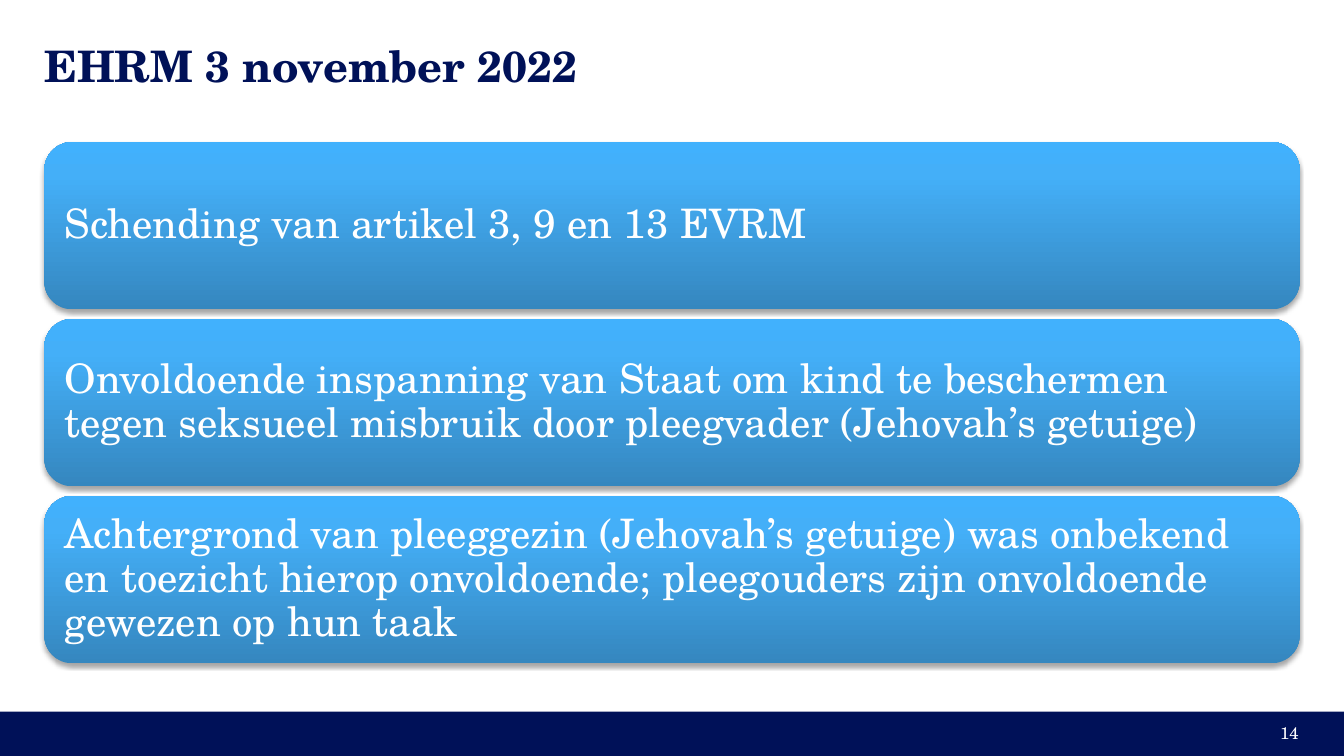
from copy import deepcopy
from dataclasses import dataclass

from lxml.etree import SubElement
from pptx import Presentation
from pptx.dml.color import RGBColor
from pptx.enum.shapes import MSO_SHAPE
from pptx.enum.text import MSO_ANCHOR, PP_ALIGN
from pptx.oxml.ns import qn
from pptx.util import Pt


@dataclass(frozen=True)
class Theme:
    font: str = "TeX Gyre Schola"
    navy: str = "001158"
    white: str = "FFFFFF"
    shade: str = "000000"
    blues: tuple = ((0, "3587BF"), (0.8, "44AFF8"), (1, "41B1FD"))
    title: int = 31
    body: float = 29
    small: int = 12


THEME = Theme()
WIDTH, HEIGHT = 960.48, 540
MARGIN = 31.7
POINTS = (
    "Schending van artikel 3, 9 en 13 EVRM",
    "Onvoldoende inspanning van Staat om kind te beschermen tegen seksueel "
    "misbruik door pleegvader (Jehovah’s getuige)",
    "Achtergrond van pleeggezin (Jehovah’s getuige) was onbekend en toezicht "
    "hierop onvoldoende; pleegouders zijn onvoldoende gewezen op hun taak",
)


def write(shape, text, size, color, inset=0, align=PP_ALIGN.LEFT, bold=False):
    """Fill a shape with one vertically centred paragraph."""
    frame = shape.text_frame
    frame.word_wrap = True
    frame.vertical_anchor = MSO_ANCHOR.MIDDLE
    frame.margin_left = frame.margin_right = Pt(inset)
    frame.margin_top = frame.margin_bottom = Pt(inset)
    para = frame.paragraphs[0]
    para.text = text
    para.alignment = align
    para.line_spacing = 0.9
    font = para.font
    font.name, font.size, font.bold = THEME.font, Pt(size), bold
    font.color.rgb = RGBColor.from_string(color)


def add_title(slide, left, top, width, height):
    box = slide.shapes.add_textbox(Pt(left), Pt(top), Pt(width), Pt(height))
    write(box, "EHRM 3 november 2022", THEME.title, THEME.navy, bold=True)


def add_footer(slide, left, top, width, height):
    bar = slide.shapes.add_shape(
        MSO_SHAPE.RECTANGLE, Pt(left), Pt(top), Pt(width), Pt(height))
    bar.shadow.inherit = False
    bar.fill.solid()
    bar.fill.fore_color.rgb = RGBColor.from_string(THEME.navy)
    bar.line.fill.background()
    span = 216
    page = slide.shapes.add_textbox(
        Pt(left + width - span - 25.2), Pt(top + 1.4), Pt(span), Pt(28.8))
    write(page, "14", THEME.small, THEME.white, inset=7.2, align=PP_ALIGN.RIGHT)


def shade(card):
    """Give a card its vertical gradient and soft shadow."""
    card.fill.gradient()
    card.fill.gradient_angle = 90
    props = card.element.spPr
    stops = props.find(".//" + qn("a:gsLst"))
    stops.insert(1, deepcopy(stops[0]))
    for stop, (place, color) in zip(card.fill.gradient_stops, THEME.blues):
        stop.position = place
        stop.color.rgb = RGBColor.from_string(color)
    card.line.fill.background()
    card.shadow.inherit = False
    shadow = SubElement(
        props.find(qn("a:effectLst")), qn("a:outerShdw"),
        blurRad=str(Pt(3.1)), dist=str(Pt(1.8)), dir="5400000", rotWithShape="0")
    color = SubElement(shadow, qn("a:srgbClr"), val=THEME.shade)
    SubElement(color, qn("a:alpha"), val="35000")


def add_cards(slide, left, top, width, height, gap=6.9):
    """Stack one card per point, evenly filling the box."""
    tall = (height - gap * (len(POINTS) - 1)) / len(POINTS)
    for row, text in enumerate(POINTS):
        card = slide.shapes.add_shape(
            MSO_SHAPE.ROUNDED_RECTANGLE, Pt(left),
            Pt(top + row * (tall + gap)), Pt(width), Pt(tall))
        shade(card)
        write(card, text, THEME.body, THEME.white, inset=8.7)


def main():
    deck = Presentation()
    deck.slide_width, deck.slide_height = Pt(WIDTH), Pt(HEIGHT)
    slide = deck.slides.add_slide(deck.slide_layouts[6])
    inner = WIDTH - 2 * MARGIN
    add_footer(slide, 0, 508.3, WIDTH, HEIGHT - 508.3)
    add_title(slide, MARGIN, MARGIN, inner, 33.8)
    add_cards(slide, MARGIN, 101.5, inner, 372.3)
    deck.save("out.pptx")


if __name__ == "__main__":
    main()
